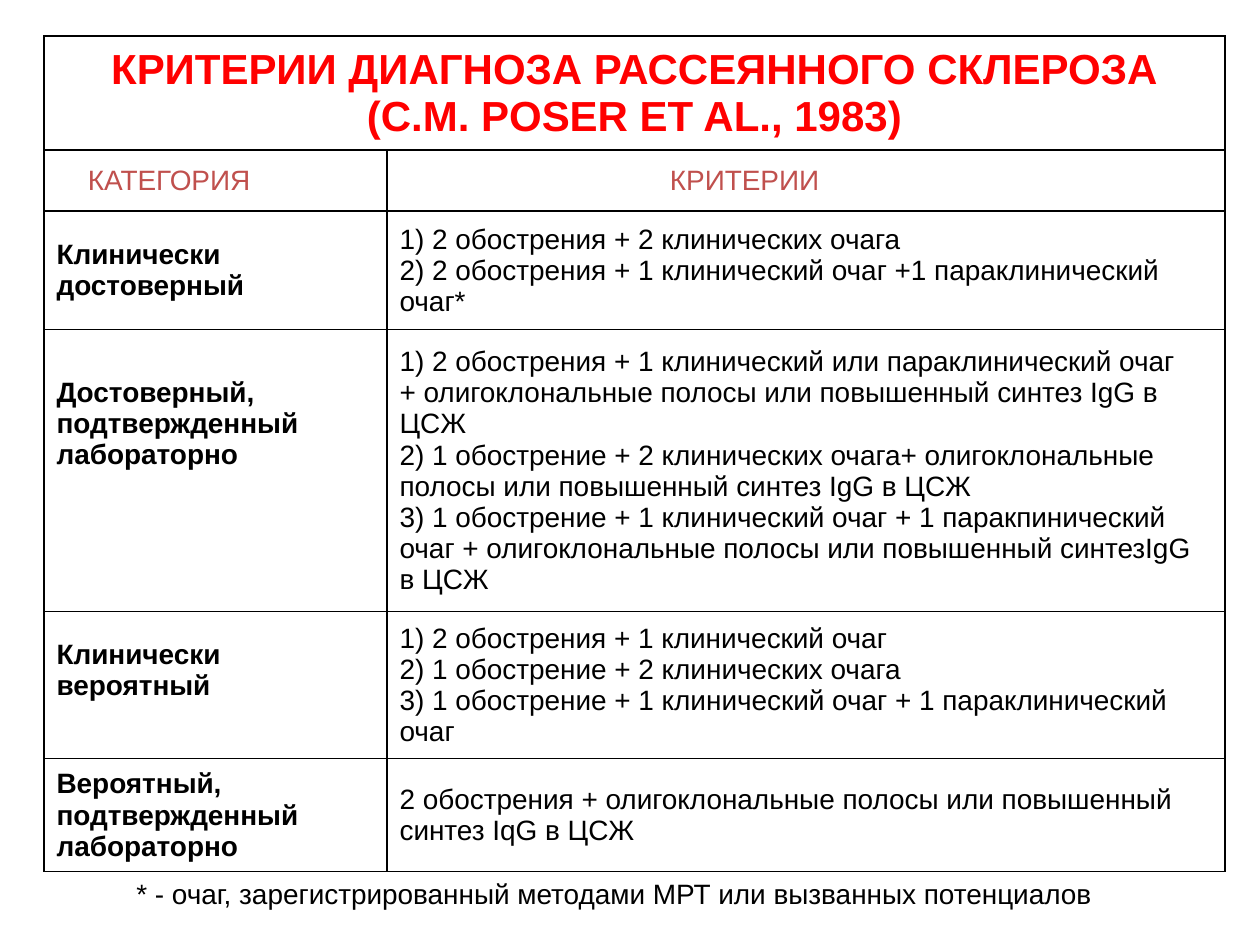
import pptx
import pptx.util
import pptx.dml.color
import pptx.enum.text
import pptx.oxml
import pptx.oxml.ns

SCALE = 914400 / 126
MID = pptx.enum.text.MSO_ANCHOR.MIDDLE
CENTER = pptx.enum.text.PP_ALIGN.CENTER
RED, ROSE, BLACK, WHITE = "FF0000", "C0504D", "000000", "FFFFFF"


def px(n):
    return pptx.util.Emu(round(n * SCALE))


def style(frame, size, color, bold):
    for para in frame.paragraphs:
        para.font.name = "Arial"
        para.font.size = pptx.util.Pt(size)
        para.font.bold = bold
        para.font.color.rgb = pptx.dml.color.RGBColor.from_string(color)


deck = pptx.Presentation()
deck.slide_width, deck.slide_height = px(1260), px(945)
slide = deck.slides.add_slide(deck.slide_layouts[6])

rows = [
    ("КРИТЕРИИ ДИАГНОЗА РАССЕЯННОГО СКЛЕРОЗА (C.M. POSER ET AL., 1983)", ""),
    ("КАТЕГОРИЯ", "КРИТЕРИИ"),
    ("Клинически достоверный",
     "1) 2 обострения + 2 клинических очага\n"
     "2) 2 обострения + 1 клинический очаг +1 параклинический очаг*"),
    ("Достоверный, подтвержденный лабораторно",
     "1) 2 обострения + 1 клинический или параклинический очаг\n"
     "+ олигоклональные полосы или повышенный синтез IgG в ЦСЖ\n"
     "2) 1 обострение + 2 клинических очага+ олигоклональные полосы или повышенный синтез IgG в ЦСЖ\n"
     "3) 1 обострение + 1 клинический очаг + 1 паракпинический очаг + олигоклональные полосы или повышенный синтезIgG в ЦСЖ"),
    ("Клинически вероятный",
     "1) 2 обострения + 1 клинический очаг\n"
     "2) 1 обострение + 2 клинических очага\n"
     "3) 1 обострение + 1 клинический очаг + 1 параклинический очаг"),
    ("Вероятный, подтвержденный лабораторно",
     "2 обострения + олигоклональные полосы или повышенный синтез IqG в ЦСЖ"),
]
widths = [343, 838]
heights = [114, 61, 119, 282, 147, 113]

frame = slide.shapes.add_table(len(rows), 2, px(44), px(36), px(sum(widths)), px(sum(heights)))
table = frame.table
table.first_row = table.horz_banding = False
for col, width in zip(table.columns, widths):
    col.width = px(width)
for row, height in zip(table.rows, heights):
    row.height = px(height)

for r, texts in enumerate(rows):
    for c, text in enumerate(texts):
        cell = table.cell(r, c)
        props = cell._tc.get_or_add_tcPr()
        for side in "LRTB":
            props.append(pptx.oxml.parse_xml(
                f'<a:ln{side} {pptx.oxml.ns.nsdecls("a")} w="9525"><a:solidFill>'
                f'<a:srgbClr val="{BLACK}"/></a:solidFill></a:ln{side}>'))
        cell.fill.solid()
        cell.fill.fore_color.rgb = pptx.dml.color.RGBColor.from_string(WHITE)
        cell.vertical_anchor = MID
        cell.text = text
        if r == 0:
            style(cell.text_frame, 24, RED, True)
        elif r == 1:
            style(cell.text_frame, 16, ROSE, False)
        else:
            style(cell.text_frame, 16, BLACK, c == 0)

table.cell(0, 0).merge(table.cell(0, 1))
table.cell(0, 0).text_frame.paragraphs[0].alignment = CENTER
table.cell(1, 0).margin_left = px(44)
table.cell(1, 1).margin_left = px(283)
table.cell(3, 0).margin_bottom = px(100)
table.cell(4, 0).margin_bottom = px(37)

note = slide.shapes.add_textbox(px(124), px(870), px(1111), px(47)).text_frame
note.word_wrap = True
note.vertical_anchor = MID
note.text = "* - очаг, зарегистрированный методами МРТ или вызванных потенциалов"
style(note, 16, BLACK, False)

deck.save("out.pptx")
